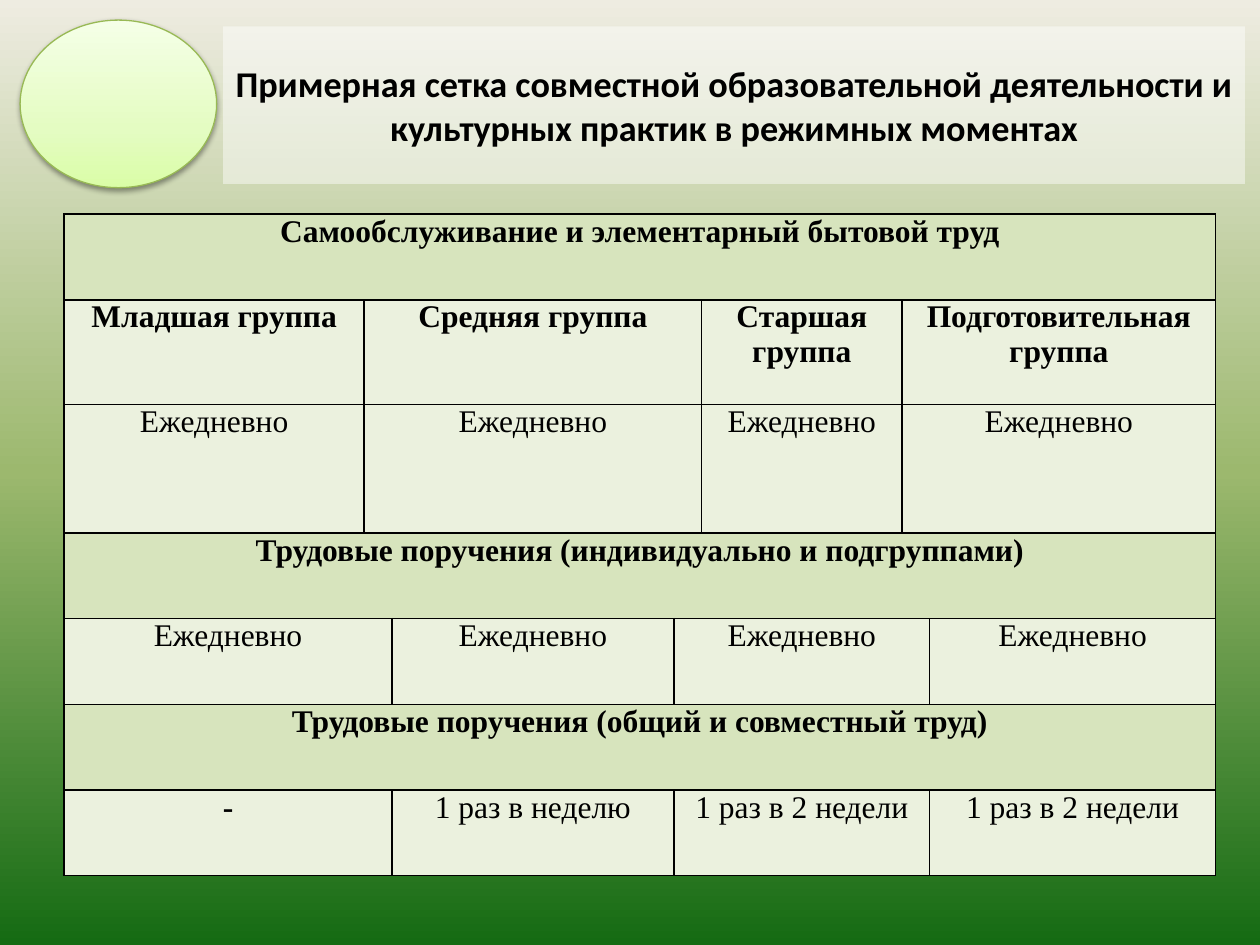
from dataclasses import dataclass

from lxml.etree import SubElement
from pptx import Presentation
from pptx.dml.color import RGBColor
from pptx.enum.shapes import MSO_SHAPE
from pptx.enum.text import MSO_ANCHOR, PP_ALIGN
from pptx.oxml import parse_xml
from pptx.oxml.ns import nsdecls, qn
from pptx.util import Inches, Pt


@dataclass(frozen=True)
class Theme:
    ink: str = "000000"
    band: str = "D7E4BD"
    cell: str = "EBF1DE"
    panel: str = "FFFFFF"
    rim: str = "98B955"
    back: tuple = ((0, "EEECE1"), (50, "9CB86E"), (100, "156B13"))
    oval: tuple = ((0, "DAFDA7"), (35, "E4FCC2"), (100, "F5FFE7"))
    head: float = 20.7
    body: float = 18
    sans: str = "Calibri"
    serif: str = "Times New Roman"


@dataclass(frozen=True)
class Row:
    high: float
    spans: tuple
    texts: tuple
    bold: tuple = ()
    fill: str = ""


THEME = Theme()
WIDTHS = (2.38, 0.22, 2.24, 0.22, 1.59, 0.22, 2.27)
WIDE = (1, 3, 1, 2)
EVEN = (2, 1, 3, 1)
DAILY = ("Ежедневно",) * 4


def band(text: str) -> Row:
    return Row(0.68, (7,), (text,), (0,), THEME.band)


ROWS = (
    band("Самообслуживание и элементарный бытовой труд"),
    Row(0.83, WIDE, ("Младшая группа", "Средняя группа", "Старшая группа",
                     "Подготовительная\nгруппа"), (0, 1, 2, 3)),
    Row(1.02, WIDE, DAILY),
    band("Трудовые поручения (индивидуально и подгруппами)"),
    Row(0.68, EVEN, DAILY),
    band("Трудовые поручения (общий и совместный труд)"),
    Row(0.68, EVEN, ("-", "1 раз в неделю", "1 раз в 2 недели",
                     "1 раз в 2 недели"), (0,)),
)


def shade(owner, fill, stops: tuple, angle: int) -> None:
    fill.gradient()
    grad = owner.element.xpath(".//a:gradFill")[0]
    group = grad.find(qn("a:gsLst"))
    for old in list(group):
        group.remove(old)
    for place, tone in stops:
        stop = SubElement(group, qn("a:gs"), pos=str(place * 1000))
        SubElement(stop, qn("a:srgbClr"), val=tone)
    grad.find(qn("a:lin")).set("ang", str(angle * 60000))


def write(frame, text: str, face: str, size: float, bold: bool) -> None:
    frame.word_wrap = True
    frame.text = text
    for para in frame.paragraphs:
        para.alignment = PP_ALIGN.CENTER
        font = para.font
        font.name, font.size, font.bold = face, Pt(size), bold
        font.color.rgb = RGBColor.from_string(THEME.ink)


def draw_oval(slide) -> None:
    oval = slide.shapes.add_shape(
        MSO_SHAPE.OVAL, Inches(0.16), Inches(0.16), Inches(1.56), Inches(1.33))
    shade(oval, oval.fill, THEME.oval, 270)
    oval.line.color.rgb = RGBColor.from_string(THEME.rim)
    oval.line.width = Pt(0.75)
    oval.shadow.inherit = False
    oval.element.spPr.find(qn("a:effectLst")).append(parse_xml(
        f'<a:outerShdw {nsdecls("a")} blurRad="{Pt(3.1)}" dist="{Pt(1.6)}" '
        f'dir="5400000" rotWithShape="0"><a:srgbClr val="{THEME.ink}">'
        '<a:alpha val="38000"/></a:srgbClr></a:outerShdw>'))


def draw_title(slide) -> None:
    box = slide.shapes.add_textbox(
        Inches(1.77), Inches(0.21), Inches(8.11), Inches(1.25))
    box.fill.solid()
    box.fill.fore_color.rgb = RGBColor.from_string(THEME.panel)
    tone = box.element.spPr.find(qn("a:solidFill"))[0]
    SubElement(tone, qn("a:alpha"), val="46000")
    frame = box.text_frame
    frame.vertical_anchor = MSO_ANCHOR.MIDDLE
    frame.margin_left = frame.margin_right = Inches(0.05)
    write(frame, "Примерная сетка совместной образовательной деятельности "
          "и культурных практик в режимных моментах",
          THEME.sans, THEME.head, True)


def frame_cell(cell) -> None:
    props = cell._tc.get_or_add_tcPr()
    for index, side in enumerate("LRTB"):
        props.insert(index, parse_xml(
            f'<a:ln{side} {nsdecls("a")} w="{Pt(1)}"><a:solidFill>'
            f'<a:srgbClr val="{THEME.ink}"/></a:solidFill></a:ln{side}>'))


def draw_row(table, index: int, row: Row) -> None:
    table.rows[index].height = Inches(row.high)
    start = 0
    for pos, (span, text) in enumerate(zip(row.spans, row.texts)):
        cell = table.cell(index, start)
        if span > 1:
            cell.merge(table.cell(index, start + span - 1))
        start += span
        cell.margin_left = cell.margin_right = Inches(0.07)
        cell.margin_top = cell.margin_bottom = 0
        cell.fill.solid()
        cell.fill.fore_color.rgb = RGBColor.from_string(row.fill or THEME.cell)
        frame_cell(cell)
        write(cell.text_frame, text, THEME.serif, THEME.body, pos in row.bold)


def draw_table(slide) -> None:
    table = slide.shapes.add_table(
        len(ROWS), len(WIDTHS), Inches(0.51), Inches(1.7),
        Inches(sum(WIDTHS)), Inches(sum(row.high for row in ROWS))).table
    table.first_row = table.horz_banding = False
    for column, width in zip(table.columns, WIDTHS):
        column.width = Inches(width)
    for index, row in enumerate(ROWS):
        draw_row(table, index, row)


def main() -> None:
    deck = Presentation()
    deck.slide_width, deck.slide_height = Inches(10), Inches(7.5)
    slide = deck.slides.add_slide(deck.slide_layouts[6])
    shade(slide, slide.background.fill, THEME.back, 90)
    draw_oval(slide)
    draw_title(slide)
    draw_table(slide)
    deck.save("out.pptx")


if __name__ == "__main__":
    main()
